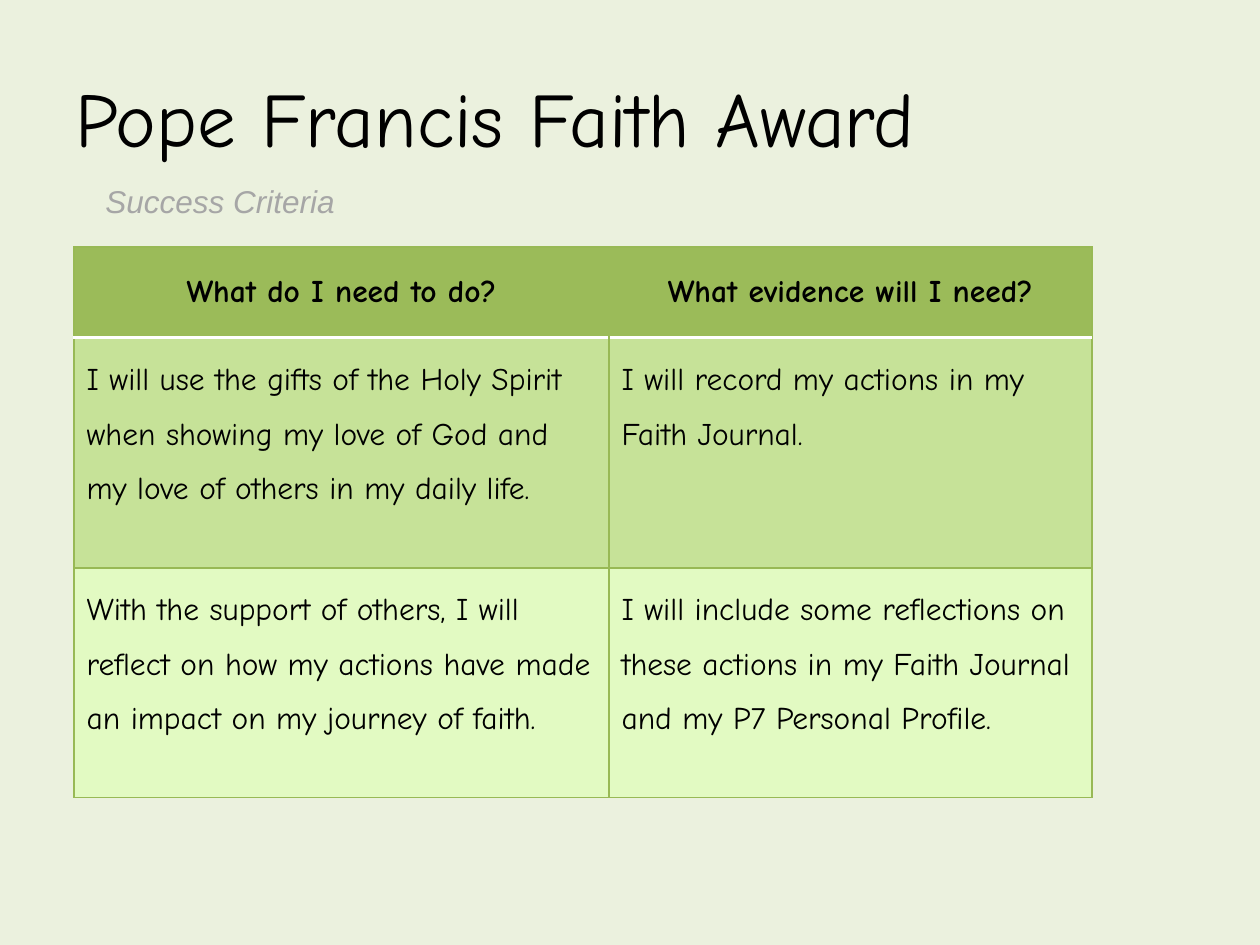
"""Build the Pope Francis Faith Award success criteria slide."""
from dataclasses import dataclass

from lxml.etree import SubElement
from pptx import Presentation
from pptx.dml.color import RGBColor as Rgb
from pptx.enum.text import MSO_ANCHOR as Anchor, MSO_AUTO_SIZE as AutoSize, PP_ALIGN as Align
from pptx.oxml.ns import qn
from pptx.util import Pt

TITLE = "Pope Francis Faith Award"
SUBTITLE = "Success Criteria"
CRITERIA = [
    ("What do I need to do?", "What evidence will I need?"),
    (
        "I will use the gifts of the Holy Spirit when showing my love of God "
        "and my love of others in my daily life.",
        "I will record my actions in my Faith Journal.",
    ),
    (
        "With the support of others, I will reflect on how my actions have made "
        "an impact on my journey of faith.",
        "I will include some reflections on these actions in my Faith Journal "
        "and my P7 Personal Profile.",
    ),
]

PX = 914400 / 126
SLIDE = (1260, 945)
TITLE_BOX = (63, 38, 1134, 157)
SUBTITLE_BOX = (93, 176, 420, 50)
TABLE_AT = (74, 247)
COLUMNS = (535, 483)
ROWS = (91, 230, 230)


@dataclass(frozen=True)
class Theme:
    font: str = "Comic Neue"
    accent_font: str = "Arial"
    title_size: int = 44
    text_size: int = 18
    background: str = "EBF1DE"
    ink: str = "000000"
    muted: str = "A6A6A6"
    edge: str = "98B955"
    header_edge: str = "FFFFFF"
    row_fills: tuple = ("9BBB59", "C6E298", "E2FAC2")


THEME = Theme()


def px(*lengths):
    return [round(length * PX) for length in lengths]


def style(font, size, color=THEME.ink, name=THEME.font, bold=False, italic=False):
    font.name, font.size, font.bold, font.italic = name, Pt(size), bold, italic
    font.color.rgb = Rgb.from_string(color)


def set_edge(cell, side, color, width):
    line = SubElement(cell._tc.get_or_add_tcPr(), qn(f"a:ln{side}"), w=str(Pt(width)))
    if color:
        fill = SubElement(line, qn("a:solidFill"))
        SubElement(fill, qn("a:srgbClr"), val=color)
    else:
        SubElement(line, qn("a:noFill"))


def fill_cell(cell, text, row, column):
    header = row == 0
    edges = {side: (THEME.edge, 0.75) for side in "LRTB"}
    if header:
        edges["R" if column == 0 else "L"] = (None, 0.75)
    if row < 2:
        edges["B" if header else "T"] = (THEME.header_edge, 2)
    for side, (color, width) in edges.items():
        set_edge(cell, side, color, width)
    cell.fill.solid()
    cell.fill.fore_color.rgb = Rgb.from_string(THEME.row_fills[row])
    cell.vertical_anchor = Anchor.MIDDLE if header else Anchor.TOP
    cell.text = text
    para = cell.text_frame.paragraphs[0]
    para.alignment = Align.CENTER if header else Align.LEFT
    para.line_spacing = 1.0 if header else 1.5
    style(para.font, THEME.text_size, bold=header)


def add_title(page):
    title = page.shapes.title
    title.left, title.top, title.width, title.height = px(*TITLE_BOX)
    title.text = TITLE
    title.text_frame.vertical_anchor = Anchor.MIDDLE
    para = title.text_frame.paragraphs[0]
    para.alignment = Align.LEFT
    style(para.font, THEME.title_size)


def add_criteria(page):
    size = (sum(COLUMNS), sum(ROWS))
    frame = page.shapes.add_table(len(ROWS), len(COLUMNS), *px(*TABLE_AT, *size))
    table = frame.table
    table.first_row = True
    table.horz_banding = False
    for column, width in zip(table.columns, px(*COLUMNS)):
        column.width = width
    for row, height in zip(table.rows, px(*ROWS)):
        row.height = height
    for row, texts in enumerate(CRITERIA):
        for column, text in enumerate(texts):
            fill_cell(table.cell(row, column), text, row, column)


def add_subtitle(page):
    box = page.shapes.add_textbox(*px(*SUBTITLE_BOX))
    box.text_frame.word_wrap = True
    box.text_frame.auto_size = AutoSize.SHAPE_TO_FIT_TEXT
    box.text_frame.text = SUBTITLE
    style(box.text_frame.paragraphs[0].font, THEME.text_size, THEME.muted,
          THEME.accent_font, italic=True)


def main():
    deck = Presentation()
    deck.slide_width, deck.slide_height = px(*SLIDE)
    page = deck.slides.add_slide(deck.slide_layouts.get_by_name("Title Only"))
    page.background.fill.solid()
    page.background.fill.fore_color.rgb = Rgb.from_string(THEME.background)
    add_title(page)
    add_criteria(page)
    add_subtitle(page)
    deck.save("out.pptx")


if __name__ == "__main__":
    main()
